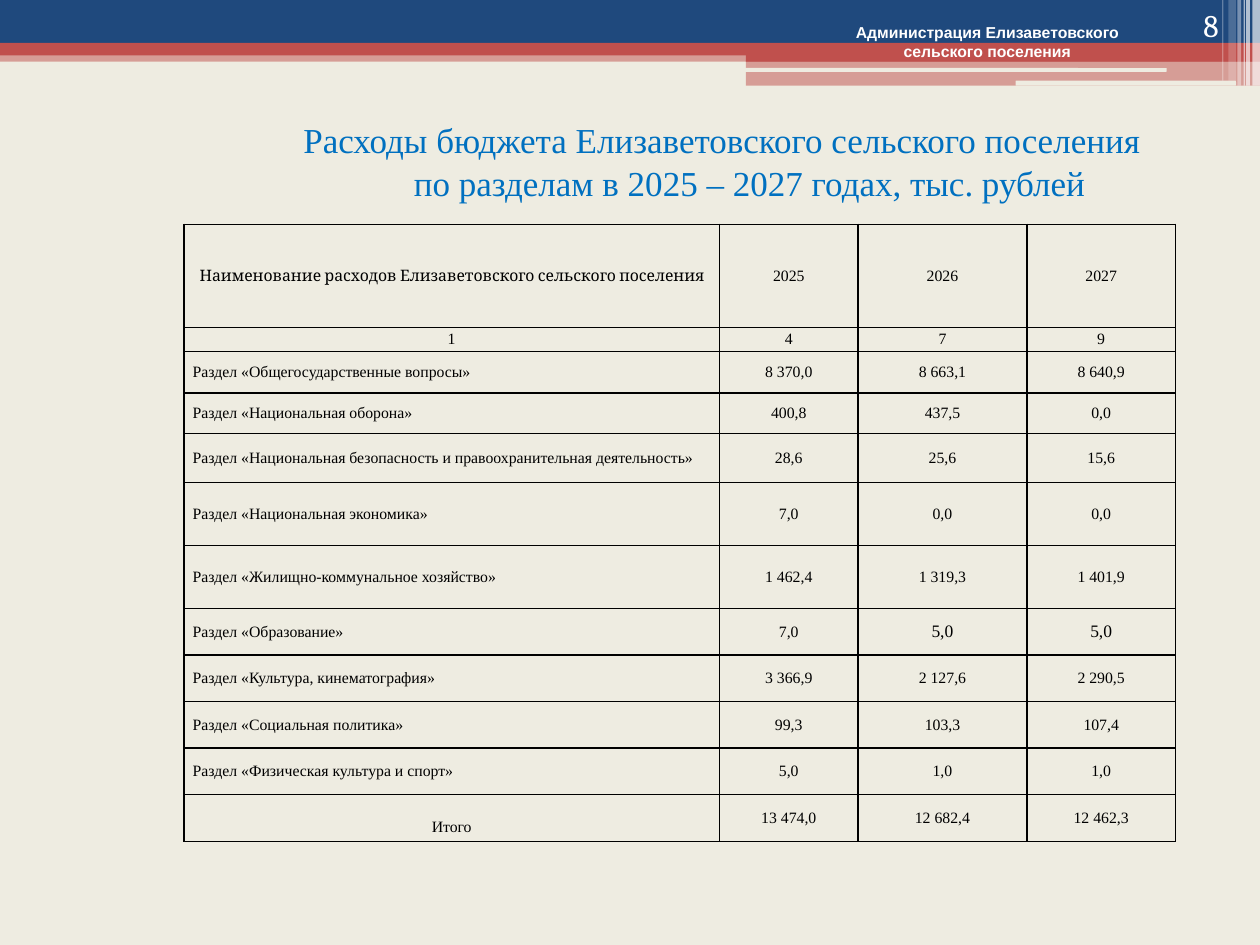
from typing import NamedTuple

from lxml import etree
from pptx import Presentation
from pptx import util as u
from pptx.dml.color import RGBColor
from pptx.enum import shapes, text
from pptx.oxml.ns import qn

COLORS = {
    "background": "EEECE1",
    "navy": "1F497D",
    "red": "C0504D",
    "white": "FFFFFF",
    "title": "0070C0",
    "black": "000000",
}
SERIF = "Times New Roman"
CENTER = text.PP_ALIGN.CENTER
MIDDLE = text.MSO_ANCHOR.MIDDLE
RECT = shapes.MSO_SHAPE.RECTANGLE
ROUND = shapes.MSO_SHAPE.ROUNDED_RECTANGLE


class Bar(NamedTuple):
    left: float
    top: float
    width: float
    height: float
    color: str
    opacity: int = 100
    kind: shapes.MSO_SHAPE = RECT


class Row(NamedTuple):
    height: float
    name: str
    values: tuple[str, str, str]
    align: text.PP_ALIGN = text.PP_ALIGN.LEFT


BARS = [
    Bar(0, 0.4, 10, 0.09, "red", 50),
    Bar(0, 0, 10, 0.34, "navy"),
    Bar(0, 0.34, 10, 0.1, "red"),
    Bar(5.92, 0.39, 4.08, 0.1, "red"),
    Bar(5.92, 0.48, 4.08, 0.2, "red", 50),
    Bar(5.91, 0.54, 3.35, 0.03, "background", kind=ROUND),
    Bar(8.06, 0.64, 1.75, 0.04, "background", kind=ROUND),
    Bar(9.94, 0, 0.06, 0.68, "white", 65),
    Bar(9.89, 0, 0.03, 0.68, "white", 65),
    Bar(9.87, 0, 0.01, 0.68, "white", 60),
    Bar(9.82, 0, 0.03, 0.68, "white", 40),
    Bar(9.75, 0, 0.06, 0.64, "white", 20),
    Bar(9.7, 0, 0.01, 0.64, "white", 30),
]

TITLE_LINES = [
    ("Расходы бюджета Елизаветовского сельского поселения", 1.42),
    ("по разделам в 2025 – 2027 годах, тыс. рублей", 1.86),
]

COLUMN_WIDTHS = [4.25, 1.1, 1.34, 1.18]
ROWS = [
    Row(0.82, "Наименование расходов Елизаветовского сельского поселения",
        ("2025", "2026", "2027"), CENTER),
    Row(0.19, "1", ("4", "7", "9"), CENTER),
    Row(0.33, "Раздел «Общегосударственные вопросы»", ("8 370,0", "8 663,1", "8 640,9")),
    Row(0.32, "Раздел «Национальная оборона»", ("400,8", "437,5", "0,0")),
    Row(0.39, "Раздел «Национальная безопасность и правоохранительная деятельность»",
        ("28,6", "25,6", "15,6")),
    Row(0.5, "Раздел «Национальная экономика»", ("7,0", "0,0", "0,0")),
    Row(0.5, "Раздел «Жилищно-коммунальное хозяйство»", ("1 462,4", "1 319,3", "1 401,9")),
    Row(0.37, "Раздел «Образование»", ("7,0", "5,0", "5,0")),
    Row(0.37, "Раздел «Культура, кинематография»", ("3 366,9", "2 127,6", "2 290,5")),
    Row(0.37, "Раздел «Социальная политика»", ("99,3", "103,3", "107,4")),
    Row(0.37, "Раздел «Физическая культура и спорт»", ("5,0", "1,0", "1,0")),
    Row(0.37, "Итого", ("13 474,0", "12 682,4", "12 462,3"), CENTER),
]
HEADER_ROW = 0
EDUCATION_ROW = 7
TOTAL_ROW = len(ROWS) - 1


def rgb(name: str) -> RGBColor:
    return RGBColor.from_string(COLORS[name])


def style(p, font: str, size: float, color: str, align, bold: bool = False) -> None:
    p.alignment = align
    p.font.name = font
    p.font.size = u.Pt(size)
    p.font.color.rgb = rgb(color)
    p.font.bold = bold


def add_bar(s, bar: Bar) -> None:
    box = [u.Inches(v) for v in (bar.left, bar.top, bar.width, bar.height)]
    sp = s.shapes.add_shape(bar.kind, *box)
    sp.shadow.inherit = False
    sp.line.fill.background()
    sp.fill.solid()
    sp.fill.fore_color.rgb = rgb(bar.color)
    if bar.opacity < 100:
        clr = sp._element.spPr.find(".//" + qn("a:srgbClr"))
        etree.SubElement(clr, qn("a:alpha")).set("val", str(bar.opacity * 1000))


def add_title(s) -> None:
    sp = s.shapes.title
    sp.left, sp.top, sp.width, sp.height = (u.Inches(v) for v in (0.02, 0.78, 10, 0.99))
    tf = sp.text_frame
    tf.auto_size = text.MSO_AUTO_SIZE.NONE
    tf.vertical_anchor = MIDDLE
    tf.text = "\n".join(line for line, _ in TITLE_LINES)
    for p, (_, indent) in zip(tf.paragraphs, TITLE_LINES):
        style(p, SERIF, 20, "title", CENTER)
        p.line_spacing = u.Pt(24.5)
        p.space_before = u.Pt(0)
        p._p.get_or_add_pPr().set("marL", str(u.Inches(indent)))


def add_label(s, box: tuple, content: str, font: str, size: float, align,
              anchor=text.MSO_ANCHOR.TOP, bold: bool = False) -> None:
    tf = s.shapes.add_textbox(*(u.Inches(v) for v in box)).text_frame
    tf.word_wrap = True
    tf.vertical_anchor = anchor
    tf.text = content
    for p in tf.paragraphs:
        style(p, font, size, "white", align, bold)


def add_borders(cell) -> None:
    tcPr = cell._tc.get_or_add_tcPr()
    for side in ("a:lnL", "a:lnR", "a:lnT", "a:lnB"):
        ln = etree.SubElement(tcPr, qn(side), w=str(u.Pt(1)))
        fill = etree.SubElement(ln, qn("a:solidFill"))
        etree.SubElement(fill, qn("a:srgbClr"), val=COLORS["black"])


def fill_cell(cell, content: str, align, font: str = SERIF, size: float = 9) -> None:
    add_borders(cell)
    cell.fill.background()
    cell.vertical_anchor = MIDDLE
    cell.margin_left = cell.margin_right = u.Inches(0.07)
    cell.margin_top = cell.margin_bottom = 0
    cell.text = content
    style(cell.text_frame.paragraphs[0], font, size, "black", align)


def add_budget_table(s) -> None:
    frame = s.shapes.add_table(
        len(ROWS), len(COLUMN_WIDTHS), u.Inches(1.46), u.Inches(1.78),
        u.Inches(sum(COLUMN_WIDTHS)), u.Inches(sum(row.height for row in ROWS)))
    tbl = frame.table
    tbl.first_row = tbl.horz_banding = False
    for column, width in zip(tbl.columns, COLUMN_WIDTHS):
        column.width = u.Inches(width)
    for i, row in enumerate(ROWS):
        tbl.rows[i].height = u.Inches(row.height)
        name_font = "Cambria" if i == HEADER_ROW else SERIF
        fill_cell(tbl.cell(i, 0), row.name, row.align, name_font)
        for j, value in enumerate(row.values, 1):
            size = 10 if i == EDUCATION_ROW and j > 1 else 9
            fill_cell(tbl.cell(i, j), value, CENTER, size=size)
    tbl.cell(TOTAL_ROW, 0).margin_top = u.Inches(0.14)


def main() -> None:
    prs = Presentation()
    prs.slide_width, prs.slide_height = u.Inches(10), u.Inches(7.5)
    s = prs.slides.add_slide(prs.slide_layouts[5])
    s.background.fill.solid()
    s.background.fill.fore_color.rgb = rgb("background")
    for bar in BARS:
        add_bar(s, bar)
    add_title(s)
    add_label(s, (6.28, 0.13, 3.11, 0.4),
              "Администрация Елизаветовского\nсельского поселения",
              "Arial", 9, CENTER, bold=True)
    add_label(s, (8.94, 0, 0.83, 0.4), "8", "Cambria", 18,
              text.PP_ALIGN.RIGHT, text.MSO_ANCHOR.BOTTOM)
    add_budget_table(s)
    prs.save("out.pptx")


if __name__ == "__main__":
    main()
